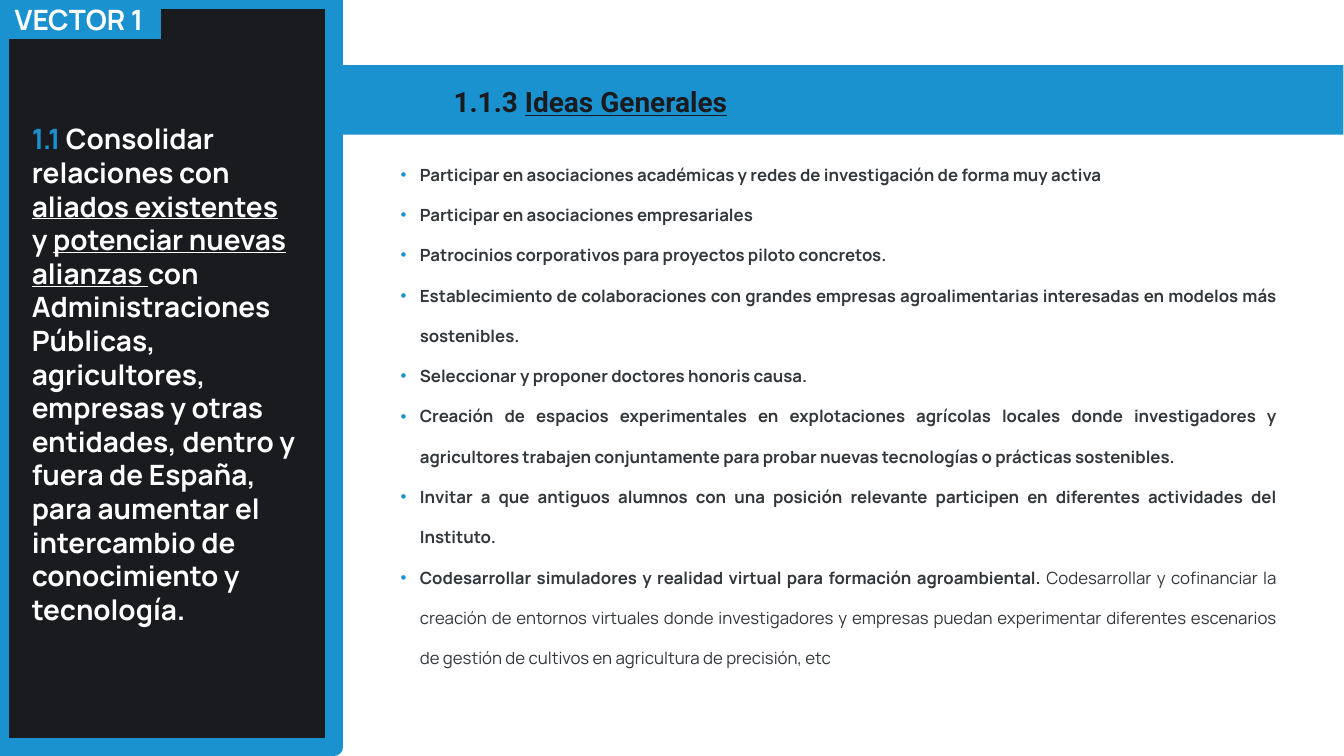
from dataclasses import dataclass

from lxml.etree import SubElement
from pptx import Presentation
from pptx.dml.color import RGBColor
from pptx.enum.shapes import MSO_SHAPE as Shape
from pptx.enum.text import MSO_ANCHOR as Anchor, MSO_AUTO_SIZE as AutoSize, PP_ALIGN as Align
from pptx.oxml.ns import qn
from pptx.util import Inches, Pt


@dataclass(frozen=True)
class Theme:
    """Colours, fonts and type sizes of the slide."""
    blue: str = "1B92D0"
    dark: str = "191B1E"
    white: str = "FFFFFF"
    body: str = "31373B"
    text_font: str = "Manrope"
    title_font: str = "Roboto"
    title_size: int = 40
    body_size: int = 24


THEME = Theme()

GOAL = [
    ("1.1 ", {"color": THEME.blue}),
    ("Consolidar relaciones con ", {}),
    ("aliados existentes ", {"underline": True}),
    ("y ", {}),
    ("potenciar nuevas alianzas ", {"underline": True}),
    ("con Administraciones Públicas, agricultores, empresas y otras entidades, dentro y fuera "
     "de España, para aumentar el intercambio de conocimiento y tecnología.", {}),
]

IDEAS = [
    [("Participar en asociaciones académicas y redes de investigación de forma muy activa", {})],
    [("Participar en asociaciones empresariales", {})],
    [("Patrocinios corporativos para proyectos piloto concretos. ", {})],
    [("Establecimiento de colaboraciones con grandes empresas agroalimentarias interesadas en "
      "modelos más sostenibles.", {})],
    [("Seleccionar y proponer doctores honoris causa.", {})],
    [("Creación de espacios experimentales en explotaciones agrícolas locales donde investigadores "
      "y agricultores trabajen conjuntamente para probar nuevas tecnologías o prácticas "
      "sostenibles.", {})],
    [("Invitar a que antiguos alumnos con una posición relevante participen en diferentes "
      "actividades del Instituto.", {})],
    [("Codesarrollar simuladores y realidad virtual para formación agroambiental. ", {}),
     ("Codesarrollar y cofinanciar la creación de entornos virtuales donde investigadores y "
      "empresas puedan experimentar diferentes escenarios de gestión de cultivos en agricultura "
      "de precisión, etc", {"bold": False})],
]


def add_panel(slide, box, fill=None, line=None, line_width=0):
    """Add a rectangle with an optional fill and outline."""
    panel = slide.shapes.add_shape(Shape.RECTANGLE, *map(Inches, box))
    panel.shadow.inherit = False
    if fill:
        panel.fill.solid()
        panel.fill.fore_color.rgb = RGBColor.from_string(fill)
    else:
        panel.fill.background()
    if line:
        panel.line.color.rgb = RGBColor.from_string(line)
        panel.line.width = Pt(line_width)
    else:
        panel.line.fill.background()
    return panel


def add_bullet(paragraph, color, indent):
    """Give a paragraph a coloured bullet with a hanging indent."""
    properties = paragraph._p.get_or_add_pPr()
    properties.set("marL", str(Inches(indent)))
    properties.set("indent", str(-Inches(indent)))
    SubElement(SubElement(properties, qn("a:buClr")), qn("a:srgbClr"), val=color)
    SubElement(properties, qn("a:buFont"), typeface="Arial")
    SubElement(properties, qn("a:buChar"), char="•")


def write_text(holder, paragraphs, *, size, color, font=THEME.text_font, align=Align.LEFT,
               spacing=1, bullet=None, side_inset=0.1):
    """Write bold paragraphs of (text, overrides) runs into a shape."""
    frame = holder.text_frame
    frame.word_wrap = True
    frame.auto_size = AutoSize.SHAPE_TO_FIT_TEXT
    frame.vertical_anchor = Anchor.TOP
    frame.margin_left = frame.margin_right = Inches(side_inset)
    for index, runs in enumerate(paragraphs):
        paragraph = frame.add_paragraph() if index else frame.paragraphs[0]
        paragraph.alignment = align
        paragraph.line_spacing = float(spacing)
        if bullet:
            add_bullet(paragraph, bullet, 0.38)
        for text, overrides in runs:
            run = paragraph.add_run()
            run.text = text
            run.font.name = font
            run.font.size = Pt(size)
            run.font.bold = overrides.get("bold", True)
            run.font.underline = overrides.get("underline", False)
            run.font.color.rgb = RGBColor.from_string(overrides.get("color", color))


def add_sidebar(slide, left, top, width, height):
    """Place the dark framed sidebar with the vector tag and its goal."""
    add_panel(slide, (left, top, width, height), fill=THEME.dark)
    goal = slide.shapes.add_textbox(*map(Inches, (left + 0.39, top + 2.37, 5.71, 10.2)))
    write_text(goal, [GOAL], size=THEME.title_size, color=THEME.white, side_inset=0.24)
    add_panel(slide, (left + 0.01, top, width - 0.02, height - 0.18),
              line=THEME.blue, line_width=25.25)
    tag = add_panel(slide, (left - 0.06, top, 3.25, 0.77), fill=THEME.blue)
    write_text(tag, [[("VECTOR 1", {})]], size=THEME.title_size, color=THEME.white,
               align=Align.CENTER)


def add_heading(slide, left, top, width, height):
    """Place the blue heading band and its title."""
    add_panel(slide, (left, top, width, height), fill=THEME.blue)
    title = add_panel(slide, (left + 2.12, top + 0.34, 16.96, 0.77), fill=THEME.blue)
    write_text(title, [[(" 1.1.3 ", {}), ("Ideas Generales", {"underline": True})]],
               size=THEME.title_size, color=THEME.dark, font=THEME.title_font)


def add_ideas(slide, left, top, width, height):
    """Place the bulleted list of ideas."""
    ideas = slide.shapes.add_textbox(*map(Inches, (left, top, width, height)))
    write_text(ideas, IDEAS, size=THEME.body_size, color=THEME.body, align=Align.JUSTIFY,
               spacing=2, bullet=THEME.blue)


def main():
    """Build and save the slide."""
    deck = Presentation()
    deck.slide_width, deck.slide_height = Inches(26.66), Inches(15)
    slide = deck.slides.add_slide(deck.slide_layouts[6])
    add_heading(slide, 6.64, 1.29, 20.01, 1.38)
    add_sidebar(slide, 0, 0, 6.64, 15)
    add_ideas(slide, 7.85, 2.81, 17.57, 10.48)
    deck.save("out.pptx")


if __name__ == "__main__":
    main()
